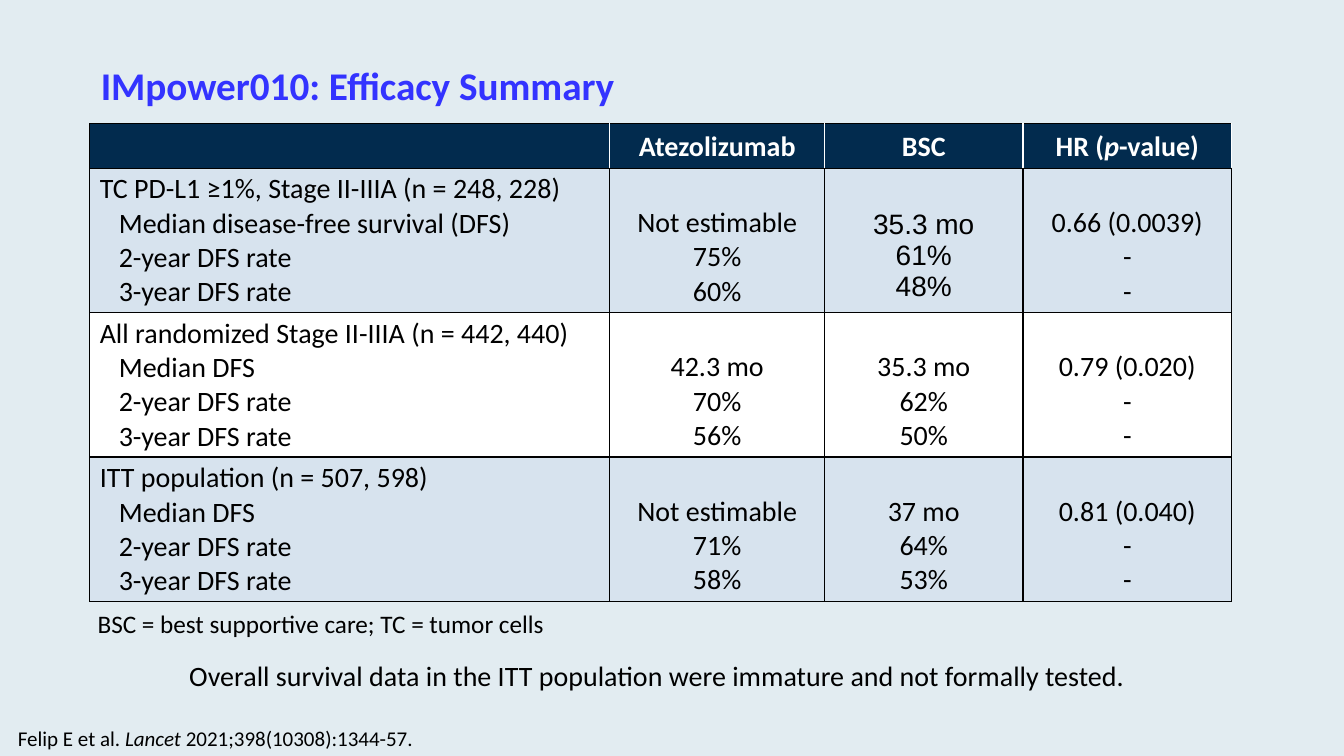
from lxml.etree import SubElement
from pptx import Presentation
from pptx.dml.color import RGBColor
from pptx.enum.text import MSO_ANCHOR, PP_ALIGN
from pptx.oxml.ns import qn
from pptx.util import Cm, Pt

COLORS = {
    "background": "E2ECF1",
    "title": "3333FF",
    "header": "022B4E",
    "band": "D7E3EE",
    "white": "FFFFFF",
    "black": "000000",
}
COLUMN_WIDTHS = (13.11, 5.41, 5.0, 5.26)
HEADER_HEIGHT = 1.12
HEADERS = (
    [],
    [("Atezolizumab", False)],
    [("BSC", False)],
    [("HR (", False), ("p", True), ("-value)", False)],
)
RATES = ["2-year DFS rate", "3-year DFS rate"]
GROUPS = (
    (
        ["TC PD-L1 ≥1%, Stage II-IIIA (n = 248, 228)", "Median disease-free survival (DFS)"] + RATES,
        ["Not estimable", "75%", "60%"],
        ["35.3 mo", "61%", "48%"],
        ["0.66 (0.0039)", "-", "-"],
    ),
    (
        ["All randomized Stage II-IIIA (n = 442, 440)", "Median DFS"] + RATES,
        ["42.3 mo", "70%", "56%"],
        ["35.3 mo", "62%", "50%"],
        ["0.79 (0.020)", "-", "-"],
    ),
    (
        ["ITT population (n = 507, 598)", "Median DFS"] + RATES,
        ["Not estimable", "71%", "58%"],
        ["37 mo", "64%", "53%"],
        ["0.81 (0.040)", "-", "-"],
    ),
)
ARIAL_CELL = (1, 2)


def color(name):
    return RGBColor.from_string(COLORS[name])


def style_span(span, size, color_name, bold=False, italic=False, face="Calibri"):
    span.font.name = face
    span.font.size = Pt(size)
    span.font.bold = bold
    span.font.italic = italic
    span.font.color.rgb = color(color_name)


def write_spans(para, pieces, size, color_name, bold=False):
    for text, italic in pieces:
        span = para.add_run()
        span.text = text
        style_span(span, size, color_name, bold, italic)


def add_text(page, box, pieces, size, color_name="black", bold=False):
    frame = page.shapes.add_textbox(*map(Cm, box)).text_frame
    frame.word_wrap = True
    write_spans(frame.paragraphs[0], pieces, size, color_name, bold)
    return frame


def add_title(page, box):
    frame = add_text(page, box, [("IMpower010: Efficacy Summary", False)], 28, "title", True)
    frame.margin_left = frame.margin_right = frame.margin_top = frame.margin_bottom = 0
    frame.vertical_anchor = MSO_ANCHOR.MIDDLE
    frame.paragraphs[0].line_spacing = 0.88


def style_cell(cell, fill_name, side_colors):
    properties = cell._tc.get_or_add_tcPr()
    for side, color_name in zip("LRTB", side_colors):
        line = SubElement(properties, qn(f"a:ln{side}"), w=str(Pt(1)))
        solid = SubElement(line, qn("a:solidFill"))
        SubElement(solid, qn("a:srgbClr"), val=COLORS[color_name])
    cell.fill.solid()
    cell.fill.fore_color.rgb = color(fill_name)
    cell.vertical_anchor = MSO_ANCHOR.BOTTOM
    cell.margin_top = cell.margin_bottom = Cm(0.1)


def fill_header(table):
    for column, pieces in enumerate(HEADERS):
        cell = table.cell(0, column)
        left = "white" if column else "black"
        style_cell(cell, "header", (left, "white", "black", "black"))
        para = cell.text_frame.paragraphs[0]
        para.alignment = PP_ALIGN.CENTER
        write_spans(para, pieces, 20, "white", True)


def fill_group(table, row, group):
    for column, lines in enumerate(group):
        cell = table.cell(row, column)
        style_cell(cell, "band" if row % 2 else "white", ["black"] * 4)
        face = "Calibri"
        if (row, column) == ARIAL_CELL:
            face = "Arial"
            cell.margin_bottom = Cm(0.25)
        cell.text_frame.text = "\n".join(lines)
        for index, para in enumerate(cell.text_frame.paragraphs):
            if column:
                para.alignment = PP_ALIGN.CENTER
            elif index:
                para._p.get_or_add_pPr().set("marL", str(Cm(0.48)))
            style_span(para.runs[0], 20, "black", face=face)


def add_results(page, box):
    table = page.shapes.add_table(len(GROUPS) + 1, len(HEADERS), *map(Cm, box)).table
    for column, width in zip(table.columns, COLUMN_WIDTHS):
        column.width = Cm(width)
    group_height = (box[3] - HEADER_HEIGHT) / len(GROUPS)
    for index, row in enumerate(table.rows):
        row.height = Cm(group_height if index else HEADER_HEIGHT)
    fill_header(table)
    for row, group in enumerate(GROUPS, 1):
        fill_group(table, row, group)


def main():
    deck = Presentation()
    deck.slide_width, deck.slide_height = Cm(33.87), Cm(19.05)
    page = deck.slides.add_slide(deck.slide_layouts[6])
    page.background.fill.solid()
    page.background.fill.fore_color.rgb = color("background")
    add_title(page, (2.54, 0.64, 29.21, 3.18))
    add_results(page, (2.26, 3.12, sum(COLUMN_WIDTHS), 12.04))
    add_text(page, (2.21, 15.21, 11.91, 1.02),
             [("BSC = best supportive care; TC = tumor cells", False)], 18)
    add_text(page, (4.52, 16.46, 24.31, 1.12),
             [("Overall survival data in the ITT population were immature and not formally tested.", False)], 20)
    add_text(page, (0.2, 18.16, 30.99, 0.89),
             [("Felip E et al. ", False), ("Lancet", True), (" 2021;398(10308):1344-57.", False)], 15)
    deck.save("out.pptx")


if __name__ == "__main__":
    main()
